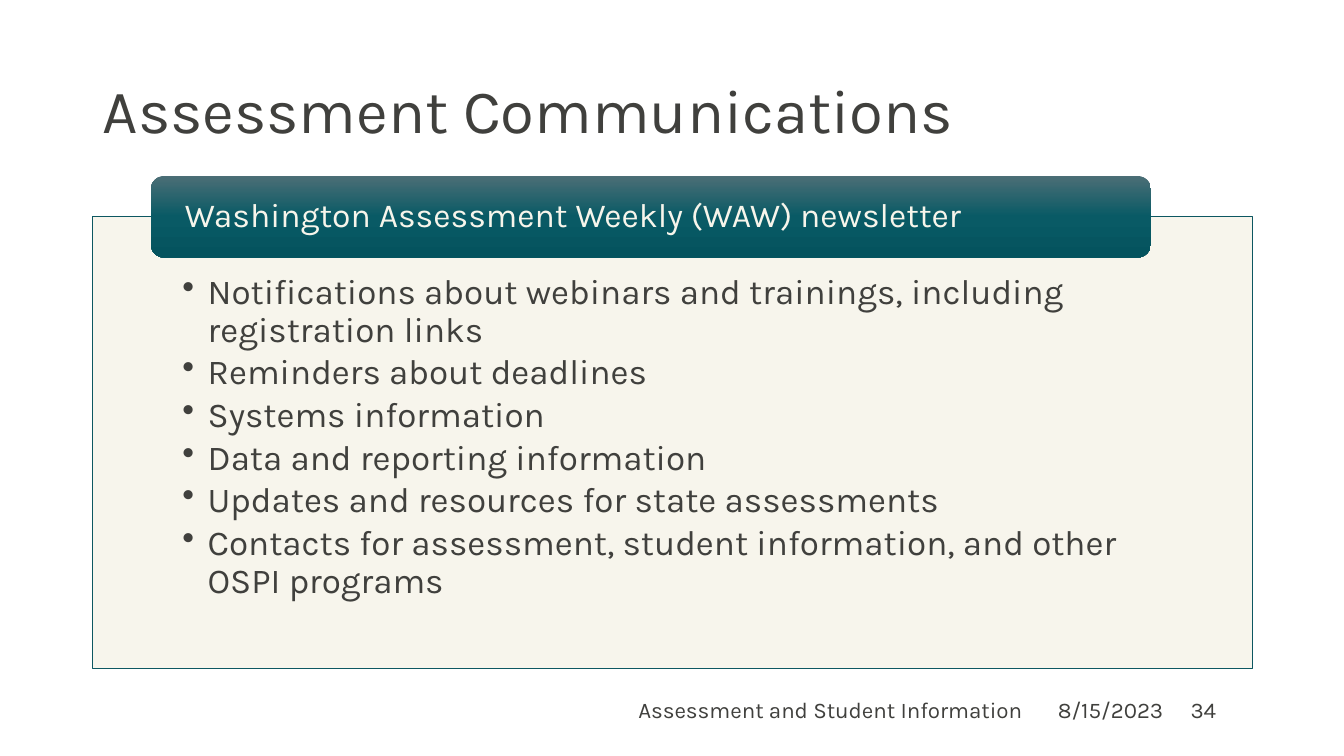
import pptx
import pptx.util
import pptx.dml.color
import pptx.enum.shapes
import pptx.enum.text
import pptx.oxml
import pptx.oxml.ns
import lxml.etree

TITLE = "Assessment Communications"
NEWSLETTER = "Washington Assessment Weekly (WAW) newsletter"
TOPICS = [
    "Notifications about webinars and trainings, including registration links",
    "Reminders about deadlines",
    "Systems information",
    "Data and reporting information",
    "Updates and resources for state assessments",
    "Contacts for assessment, student information, and other OSPI programs",
]
FOOTER = [
    ("Assessment and Student Information", 3.88, 6.36, "RIGHT"),
    ("8/15/2023", 10.18, 1.67, "CENTER"),
    ("34", 11.71, 0.7, "LEFT"),
]
FONT = "Karla"
INK, CREAM, TEAL = "40403D", "F7F5EB", "0D5761"
BANNER_STOPS = [(0, "4B6E76"), (50, "095A65"), (100, "04535E")]

WIDTH, HEIGHT = 13.33, 7.5
MARGIN = 0.92
CONTENT_WIDTH = 11.5
PANEL_TOP, PANEL_HEIGHT = 2.15, 4.48
BANNER_HEIGHT = 0.81
BANNER_LEFT = MARGIN + CONTENT_WIDTH * 0.05
BANNER_WIDTH = 9.92
BANNER_TOP = PANEL_TOP - BANNER_HEIGHT / 2
FOOTER_TOP, FOOTER_HEIGHT = 6.84, 0.4
BULLET_INDENT = 0.25

Inches = pptx.util.Inches
SHAPES = pptx.enum.shapes.MSO_SHAPE
ALIGN = pptx.enum.text.PP_ALIGN
ANCHOR = pptx.enum.text.MSO_ANCHOR
qn = pptx.oxml.ns.qn


def color(value):
    return pptx.dml.color.RGBColor.from_string(value)


def box(left, top, width, height, preset=None):
    place = [Inches(length) for length in (left, top, width, height)]
    if preset is None:
        return slide.shapes.add_textbox(*place)
    added = slide.shapes.add_shape(preset, *place)
    added.shadow.inherit = False
    return added


def write(holder, lines, size, ink, anchor=ANCHOR.MIDDLE, align=ALIGN.LEFT,
          insets=(0.1, 0.05, 0.1, 0.05), leading=0.9, after=0, bullets=False):
    frame = holder.text_frame
    frame.word_wrap = True
    frame.vertical_anchor = anchor
    (frame.margin_left, frame.margin_top,
     frame.margin_right, frame.margin_bottom) = [Inches(inset) for inset in insets]
    frame.text = "\n".join(lines)
    for paragraph in frame.paragraphs:
        paragraph.alignment = align
        paragraph.line_spacing = leading
        paragraph.space_after = pptx.util.Pt(after)
        if bullets:
            properties = paragraph._p.get_or_add_pPr()
            properties.set("marL", str(Inches(BULLET_INDENT)))
            properties.set("indent", str(-Inches(BULLET_INDENT)))
            lxml.etree.SubElement(properties, qn("a:buChar")).set("char", "•")
        for run in paragraph.runs:
            run.font.name = FONT
            run.font.size = pptx.util.Pt(size)
            run.font.color.rgb = color(ink)


def fill_gradient(shape, stops):
    shape.fill.gradient()
    shape.fill.gradient_angle = 270
    stop_list = shape._element.spPr.find(".//" + qn("a:gsLst"))
    for old_stop in list(stop_list):
        stop_list.remove(old_stop)
    for percent, value in stops:
        stop = lxml.etree.SubElement(stop_list, qn("a:gs"))
        stop.set("pos", str(percent * 1000))
        lxml.etree.SubElement(stop, qn("a:srgbClr")).set("val", value)


deck = pptx.Presentation()
deck.slide_width, deck.slide_height = Inches(WIDTH), Inches(HEIGHT)
slide = deck.slides.add_slide(deck.slide_layouts[6])

write(box(MARGIN, 0.4, CONTENT_WIDTH, 1.45), [TITLE], 44, INK)

panel = box(MARGIN, PANEL_TOP, CONTENT_WIDTH, PANEL_HEIGHT, SHAPES.RECTANGLE)
panel.fill.solid()
panel.fill.fore_color.rgb = color(CREAM)
panel_color = panel._element.spPr.find(qn("a:solidFill")).find(qn("a:srgbClr"))
lxml.etree.SubElement(panel_color, qn("a:alpha")).set("val", "90000")
panel.line.color.rgb = color(TEAL)
panel.line.width = pptx.util.Pt(0.5)
write(panel, TOPICS, 25, INK, anchor=ANCHOR.TOP,
      insets=(0.89, 0.57, 0.89, 0.19), after=3.5, bullets=True)

banner = box(BANNER_LEFT, BANNER_TOP, BANNER_WIDTH, BANNER_HEIGHT, SHAPES.ROUNDED_RECTANGLE)
fill_gradient(banner, BANNER_STOPS)
banner.line.fill.background()
write(banner, [NEWSLETTER], 24, CREAM, insets=(0.3, 0, 0.3, 0))

for wording, left, width, side in FOOTER:
    write(box(left, FOOTER_TOP, width, FOOTER_HEIGHT), [wording], 16, INK,
          align=ALIGN[side], leading=1.0, after=6)

deck.save("out.pptx")
